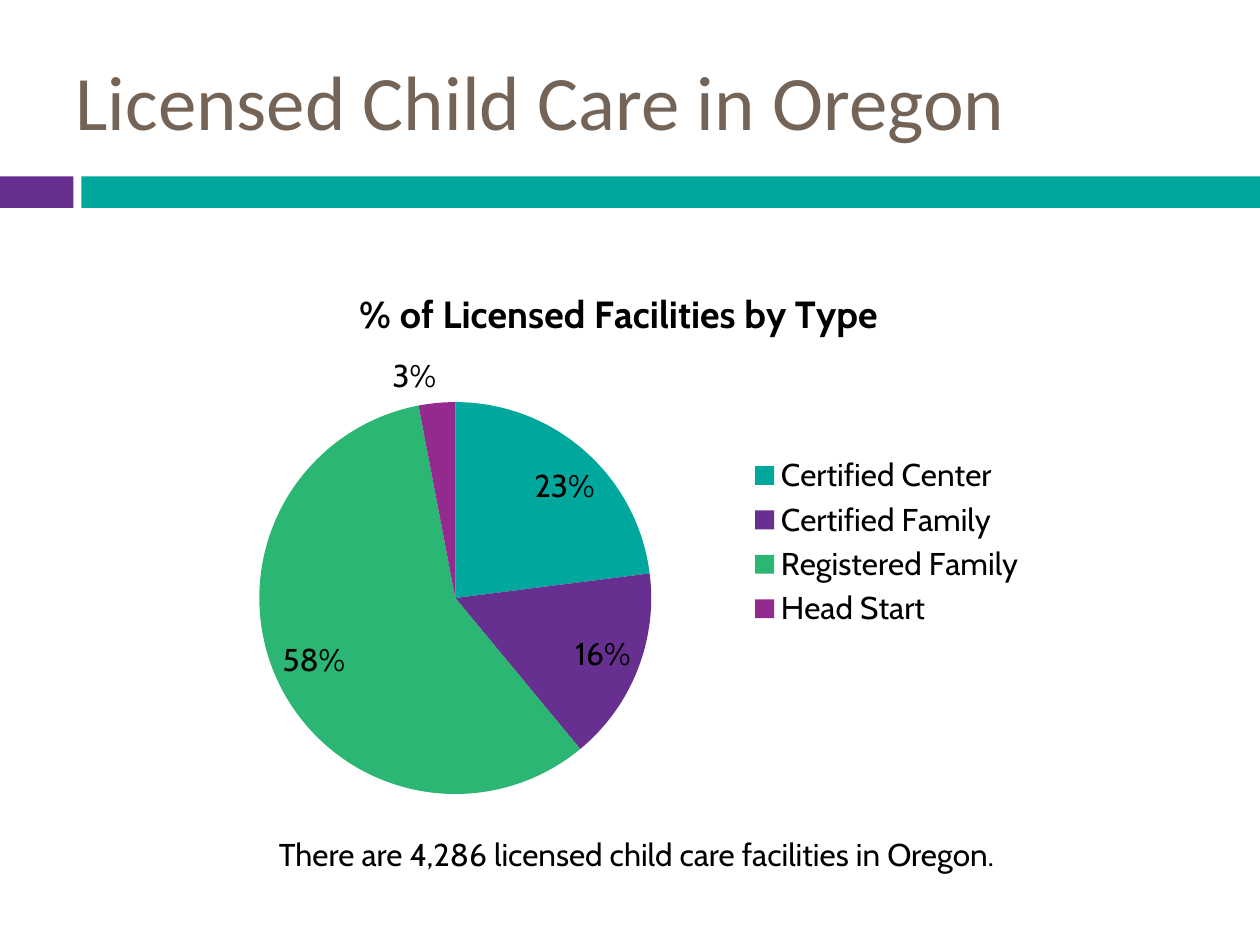
from lxml.etree import SubElement
from pptx import Presentation
from pptx.chart.data import CategoryChartData
from pptx.dml.color import RGBColor
from pptx.enum.chart import XL_CHART_TYPE, XL_LABEL_POSITION, XL_LEGEND_POSITION
from pptx.enum.shapes import MSO_SHAPE
from pptx.enum.text import MSO_ANCHOR, PP_ALIGN
from pptx.oxml.ns import qn
from pptx.util import Pt

TEAL = RGBColor(0x00, 0xA7, 0x9D)
PURPLE = RGBColor(0x67, 0x30, 0x90)
GREEN = RGBColor(0x2C, 0xB6, 0x73)
PLUM = RGBColor(0x93, 0x2A, 0x8E)
BROWN = RGBColor(0x74, 0x64, 0x58)
BLACK = RGBColor(0x00, 0x00, 0x00)

# Facility type, percent, colour
SHARES = [
    ("Certified Center", 23, TEAL),
    ("Certified Family", 16, PURPLE),
    ("Registered Family", 58, GREEN),
    ("Head Start", 3, PLUM),
]


def set_font(font, name, size, color, bold=False):
    font.name = name
    font.size = Pt(size)
    font.color.rgb = color
    font.bold = bold


def add_bar(slide, left, width, color):
    bar = slide.shapes.add_shape(
        MSO_SHAPE.RECTANGLE, Pt(left), Pt(100.8), Pt(width), Pt(18))
    bar.shadow.inherit = False
    bar.fill.solid()
    bar.fill.fore_color.rgb = color
    bar.line.fill.background()


def set_title(slide, text):
    title = slide.shapes.title
    title.left, title.top = Pt(36), Pt(18)
    title.width, title.height = Pt(666), Pt(78)
    frame = title.text_frame
    frame.text = text
    frame.vertical_anchor = MSO_ANCHOR.MIDDLE
    para = frame.paragraphs[0]
    para.alignment = PP_ALIGN.LEFT
    set_font(para.font, "Calibri", 44, BROWN)


def place_plot(chart, **box):
    """Fix the inner plot area, in fractions of the chart."""
    area = chart.plots[0]._element.getparent()
    layout = area.find(qn("c:layout"))
    if layout is None:
        layout = SubElement(area, qn("c:layout"))
        area.insert(0, layout)
    manual = SubElement(layout, qn("c:manualLayout"))
    modes = {"layoutTarget": "inner", "xMode": "edge", "yMode": "edge"}
    for tag, value in {**modes, **box}.items():
        SubElement(manual, qn(f"c:{tag}")).set("val", str(value))


def add_pie(slide, heading):
    data = CategoryChartData()
    data.categories = [name for name, _, _ in SHARES]
    data.add_series("Series 1", [share for _, share, _ in SHARES])
    chart = slide.shapes.add_chart(
        XL_CHART_TYPE.PIE, Pt(113.8), Pt(149.8), Pt(480), Pt(320), data).chart
    set_font(chart.font, "Cabin", 18, BLACK)

    # Heading and legend
    chart.has_title = True
    frame = chart.chart_title.text_frame
    frame.text = heading
    set_font(frame.paragraphs[0].font, "Cabin", 21.6, BLACK, bold=True)
    chart.has_legend = True
    chart.legend.position = XL_LEGEND_POSITION.RIGHT
    chart.legend.include_in_layout = False

    # Slices and labels
    plot = chart.plots[0]
    plot.vary_by_categories = True
    for i, (_, _, color) in enumerate(SHARES):
        fill = plot.series[0].points[i].format.fill
        fill.solid()
        fill.fore_color.rgb = color
    plot.has_data_labels = True
    labels = plot.data_labels
    labels.show_percentage = True
    labels.show_value = False
    labels.number_format = "0%"
    labels.number_format_is_linked = False
    labels.position = XL_LABEL_POSITION.BEST_FIT
    set_font(labels.font, "Cabin", 18, BLACK)
    place_plot(chart, x=0.07, y=0.25, w=0.47, h=0.7)


def add_note(slide, text):
    box = slide.shapes.add_textbox(Pt(113.8), Pt(473.8), Pt(504), Pt(29))
    frame = box.text_frame
    frame.word_wrap = True
    frame.text = text
    para = frame.paragraphs[0]
    para.alignment = PP_ALIGN.CENTER
    set_font(para.font, "Cabin", 18, BLACK)


def main():
    deck = Presentation()
    deck.slide_width, deck.slide_height = Pt(720), Pt(540)
    slide = deck.slides.add_slide(deck.slide_layouts[5])

    # Two-colour band under the title
    add_bar(slide, 0, 42, PURPLE)
    add_bar(slide, 46.5, 673.5, TEAL)

    set_title(slide, "Licensed Child Care in Oregon")
    add_pie(slide, "% of Licensed Facilities by Type")
    add_note(slide, "There are 4,286 licensed child care facilities in Oregon. ")
    deck.save("out.pptx")


if __name__ == "__main__":
    main()
